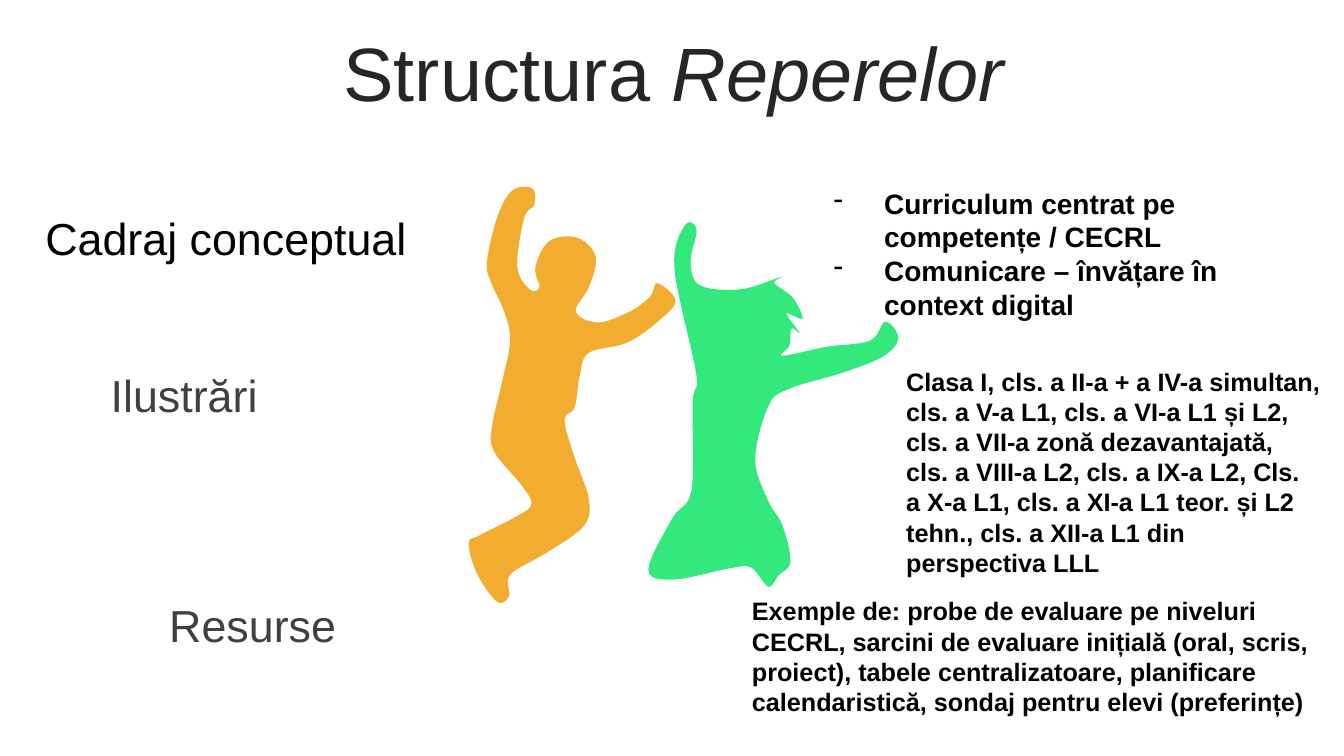
from lxml import etree
from pptx import Presentation
from pptx.dml.color import RGBColor
from pptx.enum.text import MSO_ANCHOR, PP_ALIGN
from pptx.oxml.ns import qn
from pptx.util import Inches, Pt

TOP, MIDDLE = MSO_ANCHOR.TOP, MSO_ANCHOR.MIDDLE
LEFT, CENTER = PP_ALIGN.LEFT, PP_ALIGN.CENTER

BLACK = RGBColor(0x00, 0x00, 0x00)
CHARCOAL = RGBColor(0x26, 0x26, 0x26)
GRAY = RGBColor(0x40, 0x40, 0x40)
ORANGE = RGBColor(0xF2, 0xAC, 0x30)
GREEN = RGBColor(0x33, 0xE9, 0x7C)
FONT = "Arial"

# Boxes are left, top, width, height in percent of the slide.
TITLE = ("Structura ", "Reperelor")
TITLE_BOX = (2.63, 4.93, 94.97, 10.53)

SECTION_SIZE = (29.48, 8.53)
SECTIONS = [
    ("Cadraj conceptual", (2.63, 27.2), BLACK),
    ("Ilustrări", (7.5, 48), GRAY),
    ("Resurse", (11.85, 78.4), GRAY),
]

CONCEPTS = [
    "Curriculum centrat pe competențe / CECRL",
    "Comunicare – învățare în context digital",
]
CONCEPTS_BOX = (61.29, 23.87, 36.08, 19.33)

DETAILS = [
    ("Clasa I, cls. a II-a + a IV-a simultan, cls. a V-a L1, cls. a VI-a L1 "
     "și L2, cls. a VII-a zonă dezavantajată, cls. a VIII-a L2, cls. a IX-a L2, "
     "Cls. a X-a L1, cls. a XI-a L1 teor. și L2 tehn., cls. a XII-a L1 din "
     "perspectiva LLL", (66.69, 47.73, 32.33, 25.6)),
    ("Exemple de: probe de evaluare pe niveluri CECRL, sarcini de evaluare "
     "inițială (oral, scris, proiect), tabele centralizatoare, planificare "
     "calendaristică, sondaj pentru elevi (preferințe)",
     (55.21, 78.13, 43.06, 17.47)),
]

# Outlines are in hundredths of an inch; a smooth curve joins the points.
GIRL = [
    (776, 353), (820, 344), (863, 338), (878, 319), (891, 335), (877, 353),
    (838, 369), (782, 386), (762, 403), (749, 456), (762, 497), (776, 521),
    (784, 557), (772, 571), (762, 582), (745, 563), (723, 564), (668, 575),
    (643, 565), (667, 514), (686, 486), (687, 399), (691, 374), (675, 301),
    (669, 267), (671, 241), (682, 221), (691, 229), (685, 259), (694, 283),
    (735, 287), (774, 275), (768, 281), (786, 295), (796, 316), (780, 311),
    (793, 330), (785, 326), (783, 343),
]
BOY = [
    (465, 539), (476, 531), (513, 512), (527, 500), (517, 481), (490, 448),
    (488, 423), (498, 379), (506, 338), (500, 309), (487, 280), (483, 260),
    (493, 216), (508, 189), (528, 187), (530, 203), (520, 216), (513, 264),
    (525, 287), (535, 285), (531, 265), (545, 239), (573, 236), (591, 255),
    (584, 285), (571, 309), (593, 320), (625, 309), (645, 294), (652, 281),
    (670, 298), (655, 317), (622, 340), (584, 350), (575, 373), (570, 404),
    (560, 417), (570, 454), (584, 495), (579, 522), (541, 549), (506, 570),
    (505, 591), (493, 597), (473, 569),
]
CURVE_STEPS = 6

prs = Presentation()
prs.slide_width, prs.slide_height = Inches(13.33), Inches(7.5)
slide = prs.slides.add_slide(prs.slide_layouts[6])


def smooth(outline):
    """Return a closed Catmull-Rom curve through the points, in EMU."""
    curve = []
    for i, start in enumerate(outline):
        before, end = outline[i - 1], outline[(i + 1) % len(outline)]
        after = outline[(i + 2) % len(outline)]
        for step in range(CURVE_STEPS):
            t = step / CURVE_STEPS
            curve.append(tuple(
                Inches((2 * b + (c - a) * t + (2 * a - 5 * b + 4 * c - d) * t ** 2
                        + (3 * b - a - 3 * c + d) * t ** 3) / 200)
                for a, b, c, d in zip(before, start, end, after)))
    return curve


def add_silhouette(outline, color):
    first, *rest = smooth(outline)
    builder = slide.shapes.build_freeform(*first)
    builder.add_line_segments(rest, close=True)
    figure = builder.convert_to_shape()
    figure.shadow.inherit = False
    figure.fill.solid()
    figure.fill.fore_color.rgb = color
    figure.line.fill.background()


def format_run(run, size, color, bold=False, italic=False):
    run.font.name, run.font.size = FONT, Pt(size)
    run.font.bold, run.font.italic = bold, italic
    run.font.color.rgb = color


def add_text(lines, box, size, color, anchor=TOP, align=LEFT, bold=False,
             bullet=None):
    """Place one paragraph per line in a box and return the text frame."""
    sides = (prs.slide_width, prs.slide_height) * 2
    area = [round(share * side / 100) for share, side in zip(box, sides)]
    frame = slide.shapes.add_textbox(*area).text_frame
    frame.word_wrap = True
    frame.vertical_anchor = anchor
    frame.text = "\n".join(lines)
    for paragraph in frame.paragraphs:
        paragraph.alignment = align
        if bullet:
            properties = paragraph._p.get_or_add_pPr()
            properties.set("marL", str(Inches(0.5)))
            properties.set("indent", str(-Inches(0.5)))
            etree.SubElement(properties, qn("a:buChar"), char=bullet)
        for run in paragraph.runs:
            format_run(run, size, color, bold)
    return frame


heading = add_text([TITLE[0]], TITLE_BOX, 54, CHARCOAL, MIDDLE, CENTER).paragraphs[0]
heading.line_spacing = 0.9
emphasis = heading.add_run()
emphasis.text = TITLE[1]
format_run(emphasis, 54, CHARCOAL, italic=True)

add_silhouette(GIRL, GREEN)
add_silhouette(BOY, ORANGE)
for section, corner, color in SECTIONS:
    add_text([section], corner + SECTION_SIZE, 32, color)
add_text(CONCEPTS, CONCEPTS_BOX, 20, BLACK, MIDDLE, bold=True, bullet="-")
for detail, box in DETAILS:
    add_text([detail], box, 18, BLACK, bold=True)

prs.save("out.pptx")
